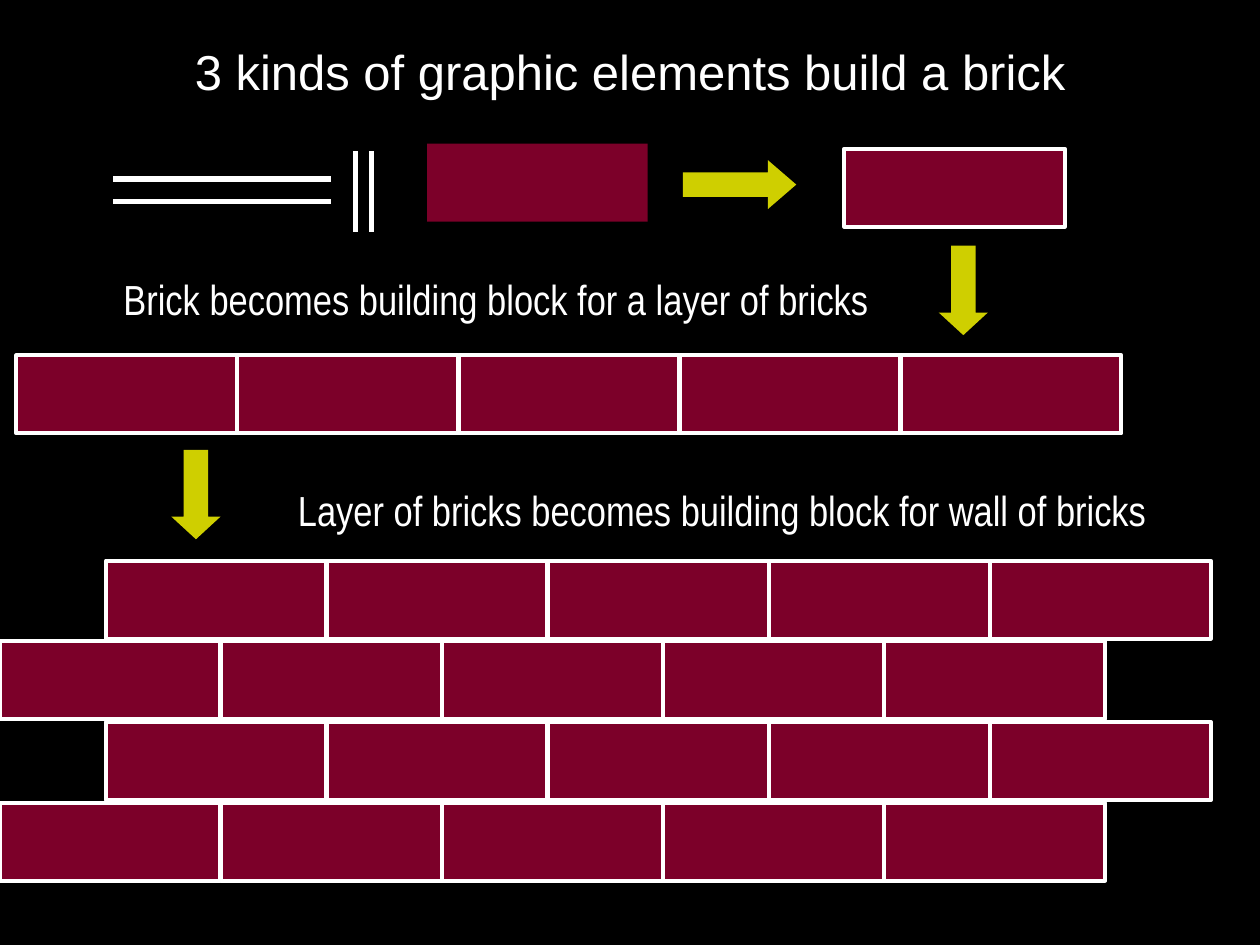
"""Build a slide showing how graphic elements form a brick, a layer and a wall."""
from lxml.etree import SubElement
from pptx import Presentation
from pptx.dml.color import RGBColor
from pptx.enum.shapes import MSO_CONNECTOR, MSO_SHAPE
from pptx.enum.text import MSO_ANCHOR, PP_ALIGN
from pptx.oxml.ns import qn
from pptx.util import Inches, Pt

THEME = {
    "background": RGBColor(0x00, 0x00, 0x00),
    "light": RGBColor(0xFF, 0xFF, 0xFF),
    "brick": RGBColor(0x99, 0x00, 0x33),
    "arrow": RGBColor(0xFF, 0xFF, 0x00),
    "opacity": 81000,
    "outline": Pt(2.25),
    "stroke": Pt(3),
    "title": {"name": "Arial", "size": Pt(28), "bold": False},
    "caption": {"name": "Arial Narrow", "size": Pt(24), "bold": False},
}

TITLE = ("3 kinds of graphic elements build a brick", (1.05, 0.28, 7.9, 0.57))
CAPTIONS = [
    ("Brick becomes building block for a layer of bricks", (0.64, 2.12, 6.59, 0.5)),
    ("Layer of bricks becomes building block for wall of bricks", (1.91, 3.8, 7.64, 0.5)),
]
STROKES = [
    (0.9, 1.42, 2.63, 1.42),
    (0.9, 1.6, 2.63, 1.6),
    (2.82, 1.2, 2.82, 1.84),
    (2.95, 1.2, 2.95, 1.84),
]
ARROWS = [
    ((5.42, 1.27, 0.9, 0.39), 0, 0.58),
    ((7.29, 2.11, 0.71, 0.39), 90, 0.46),
    ((1.2, 3.73, 0.71, 0.39), 90, 0.46),
]
BRICK_WIDTH, BRICK_HEIGHT = 1.75, 0.62
BRICKS_PER_LAYER = 5
BRICK_PITCH = 7.02 / (BRICKS_PER_LAYER - 1)
PLAIN_BRICK = (3.39, 1.14)
FINISHED_BRICK = (6.7, 1.18)
SINGLE_LAYER = (0.13, 2.82)
WALL_TOP, WALL_PITCH, WALL_ROWS = 4.45, 0.64, 4
WALL_LEFTS = (0.84, 0)


def add_filled(shapes, kind, box, color, outlined=False):
    shape = shapes.add_shape(kind, *map(Inches, box))
    shape.shadow.inherit = False
    shape.fill.solid()
    shape.fill.fore_color.rgb = color
    color_element = shape.fill._xPr.find(qn("a:solidFill"))[0]
    SubElement(color_element, qn("a:alpha"), val=str(THEME["opacity"]))
    if outlined:
        shape.line.color.rgb = THEME["light"]
        shape.line.width = THEME["outline"]
    else:
        shape.line.fill.background()
    return shape


def add_brick(shapes, left, top, outlined=True):
    box = (left, top, BRICK_WIDTH, BRICK_HEIGHT)
    add_filled(shapes, MSO_SHAPE.RECTANGLE, box, THEME["brick"], outlined)


def add_layer(shapes, left, top):
    layer = shapes.add_group_shape()
    for index in range(BRICKS_PER_LAYER):
        add_brick(layer.shapes, left + index * BRICK_PITCH, top)


def add_arrow(shapes, box, rotation, head):
    arrow = add_filled(shapes, MSO_SHAPE.RIGHT_ARROW, box, THEME["arrow"])
    arrow.rotation = rotation
    arrow.adjustments[0] = 0.5
    arrow.adjustments[1] = head


def add_stroke(shapes, ends):
    stroke = shapes.add_connector(MSO_CONNECTOR.STRAIGHT, *map(Inches, ends))
    stroke.line.color.rgb = THEME["light"]
    stroke.line.width = THEME["stroke"]
    SubElement(stroke._element.spPr, qn("a:effectLst"))


def write_text(shape, text, box, font_values):
    for name, value in zip(("left", "top", "width", "height"), box):
        setattr(shape, name, Inches(value))
    frame = shape.text_frame
    frame.text = text
    frame.word_wrap = True
    frame.vertical_anchor = MSO_ANCHOR.TOP
    paragraph = frame.paragraphs[0]
    paragraph.alignment = PP_ALIGN.CENTER
    font = paragraph.runs[0].font
    for name, value in font_values.items():
        setattr(font, name, value)
    font.color.rgb = THEME["light"]


def main():
    presentation = Presentation()
    presentation.slide_width, presentation.slide_height = Inches(10), Inches(7.5)
    slide = presentation.slides.add_slide(presentation.slide_layouts[5])
    slide.background.fill.solid()
    slide.background.fill.fore_color.rgb = THEME["background"]
    shapes = slide.shapes

    write_text(shapes.title, *TITLE, THEME["title"])
    for text, box in CAPTIONS:
        write_text(shapes.add_textbox(*map(Inches, box)), text, box, THEME["caption"])
    for ends in STROKES:
        add_stroke(shapes, ends)
    add_brick(shapes, *PLAIN_BRICK, outlined=False)
    add_brick(shapes, *FINISHED_BRICK)
    for arrow in ARROWS:
        add_arrow(shapes, *arrow)
    add_layer(shapes, *SINGLE_LAYER)
    for row in range(WALL_ROWS):
        add_layer(shapes, WALL_LEFTS[row % 2], WALL_TOP + row * WALL_PITCH)
    presentation.save("out.pptx")


if __name__ == "__main__":
    main()
